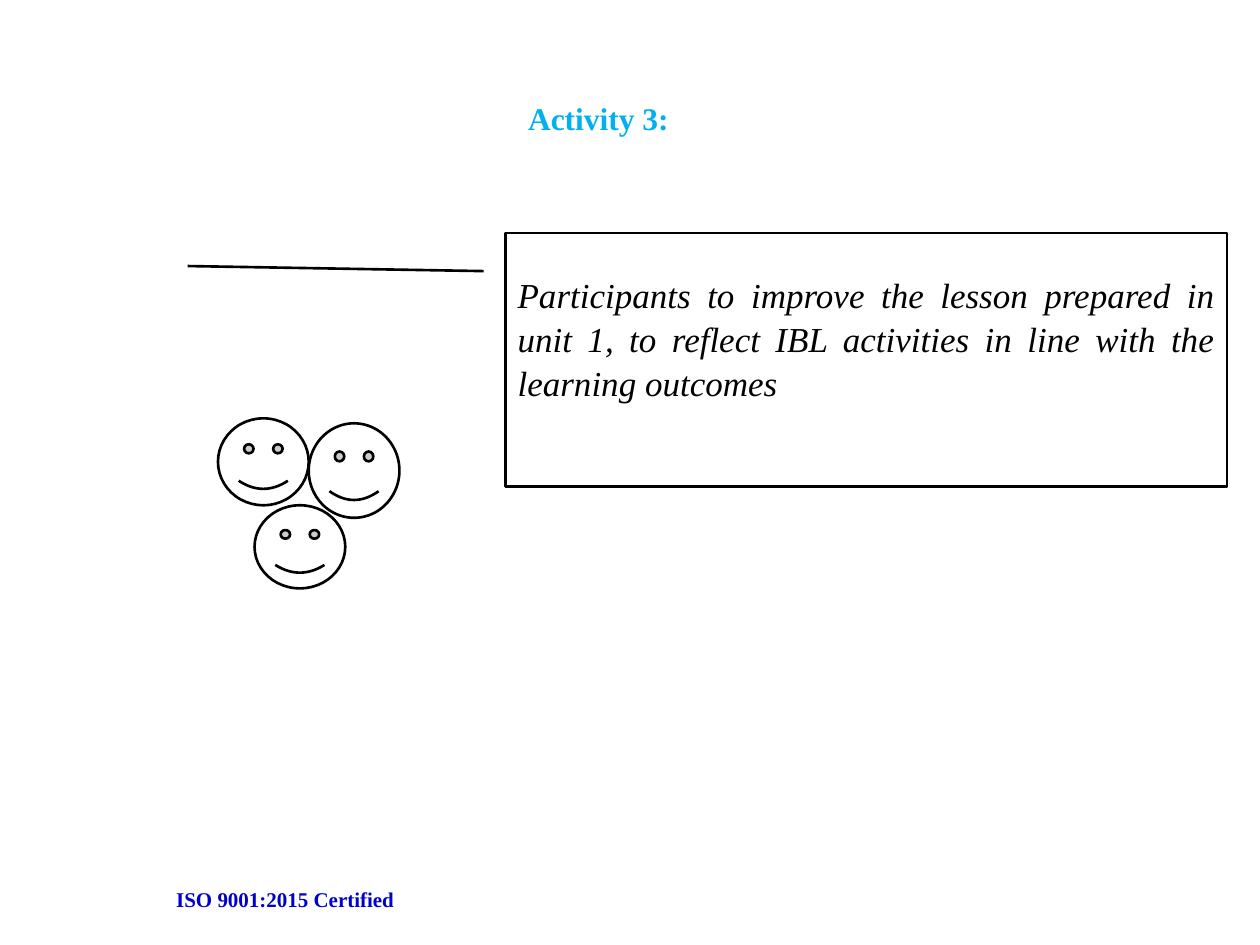
from dataclasses import dataclass

from pptx import Presentation
from pptx.dml.color import RGBColor
from pptx.enum.shapes import MSO_SHAPE
from pptx.enum.text import MSO_ANCHOR, PP_ALIGN
from pptx.shapes.autoshape import Shape
from pptx.slide import Slide
from pptx.util import Inches, Pt

BLACK = RGBColor(0x00, 0x00, 0x00)
WHITE = RGBColor(0xFF, 0xFF, 0xFF)
SKY = RGBColor(0x00, 0xB0, 0xF0)
NAVY = RGBColor(0x00, 0x00, 0xCC)
FONT = "Times New Roman"
SLIDE_WIDTH, SLIDE_HEIGHT = Inches(10), Inches(7.5)


@dataclass(frozen=True)
class Area:
    """Left, top, width and height as percentages of the slide's size."""
    left: float
    top: float
    width: float
    height: float

    def lengths(self) -> tuple[int, int, int, int]:
        return (
            int(SLIDE_WIDTH * self.left / 100),
            int(SLIDE_HEIGHT * self.top / 100),
            int(SLIDE_WIDTH * self.width / 100),
            int(SLIDE_HEIGHT * self.height / 100),
        )


@dataclass(frozen=True)
class Wording:
    text: str
    size: int
    color: RGBColor
    align: PP_ALIGN = PP_ALIGN.LEFT
    anchor: MSO_ANCHOR = MSO_ANCHOR.TOP
    bold: bool = False
    italic: bool = False
    line_spacing: float = 1.0
    bottom_inset: float = 0.05


HEADING = Wording("Activity 3:", 18, SKY, PP_ALIGN.CENTER, MSO_ANCHOR.MIDDLE,
                  bold=True, bottom_inset=0.77)
CERTIFICATION = Wording("ISO 9001:2015 Certified", 12, NAVY, bold=True)
TASK = Wording(
    "Participants to improve the lesson prepared in unit 1, to reflect IBL "
    "activities in line with the learning outcomes",
    20, BLACK, PP_ALIGN.JUSTIFY, MSO_ANCHOR.MIDDLE,
    italic=True, line_spacing=1.05, bottom_inset=0.41,
)
PARTICIPANTS = (
    Area(17.3, 44.27, 7.2, 9.2),
    Area(24.5, 44.8, 7.2, 10),
    Area(20.2, 53.47, 7.2, 8.8),
)
# Start y, start x, end y and end x of the pointer, as shares of the callout
POINTER = (0.15, -0.03, 0.13, -0.44)


def write(shape: Shape, wording: Wording) -> None:
    frame = shape.text_frame
    frame.word_wrap = True
    frame.vertical_anchor = wording.anchor
    frame.margin_bottom = Inches(wording.bottom_inset)
    paragraph = frame.paragraphs[0]
    paragraph.text = wording.text
    paragraph.alignment = wording.align
    paragraph.line_spacing = wording.line_spacing
    font = paragraph.font
    font.name, font.size = FONT, Pt(wording.size)
    font.bold, font.italic = wording.bold, wording.italic
    font.color.rgb = wording.color


def add_text(slide: Slide, area: Area, wording: Wording) -> None:
    write(slide.shapes.add_textbox(*area.lengths()), wording)


def add_outlined(slide: Slide, kind: MSO_SHAPE, area: Area) -> Shape:
    shape = slide.shapes.add_shape(kind, *area.lengths())
    shape.shadow.inherit = False
    shape.fill.solid()
    shape.fill.fore_color.rgb = WHITE
    shape.line.color.rgb = BLACK
    shape.line.width = Pt(1.5)
    return shape


def add_callout(slide: Slide, area: Area, wording: Wording) -> None:
    callout = add_outlined(slide, MSO_SHAPE.LINE_CALLOUT_1, area)
    for index, share in enumerate(POINTER):
        callout.adjustments[index] = share
    write(callout, wording)


def main() -> None:
    presentation = Presentation()
    presentation.slide_width = SLIDE_WIDTH
    presentation.slide_height = SLIDE_HEIGHT
    slide = presentation.slides.add_slide(presentation.slide_layouts[6])

    add_text(slide, Area(13, 93.2, 51.9, 4), CERTIFICATION)
    add_text(slide, Area(2.5, 8.93, 90, 16.67), HEADING)
    for area in PARTICIPANTS:
        add_outlined(slide, MSO_SHAPE.SMILEY_FACE, area)
    add_callout(slide, Area(40.1, 24.67, 57.3, 26.8), TASK)

    presentation.save("out.pptx")


if __name__ == "__main__":
    main()
